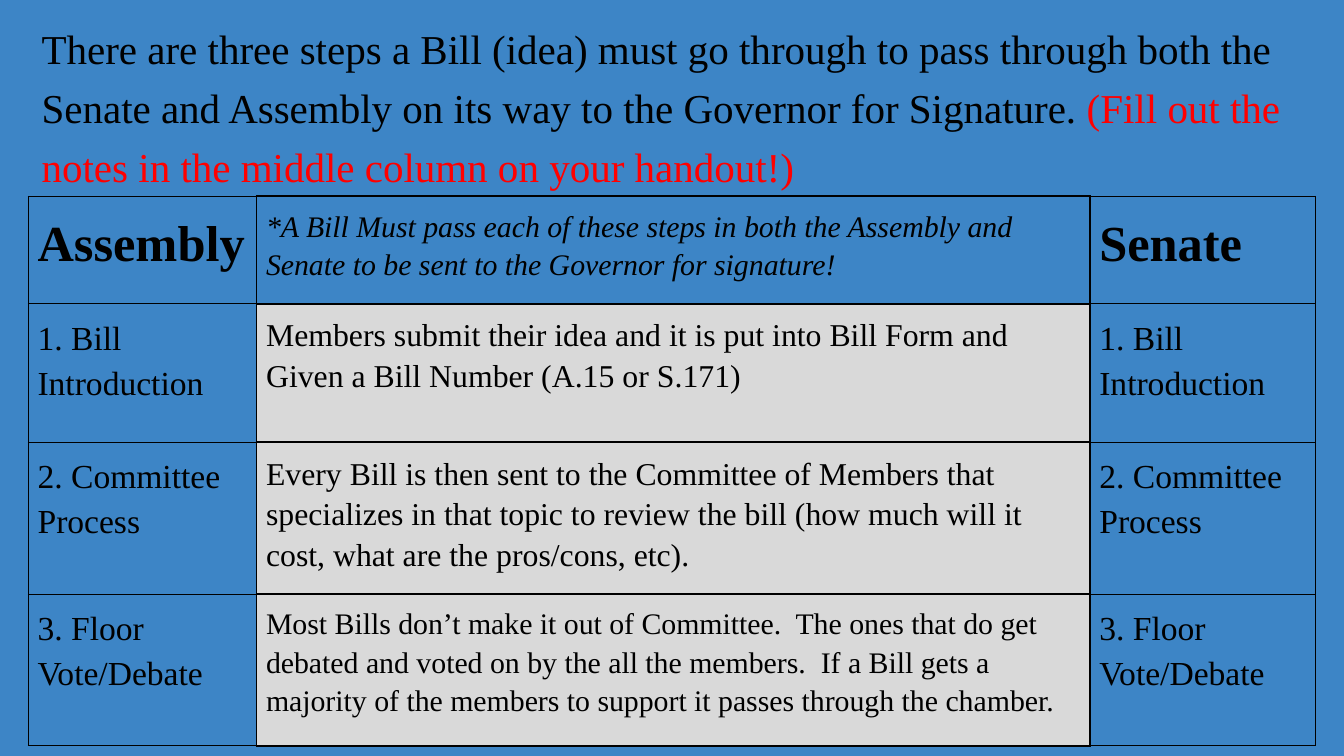
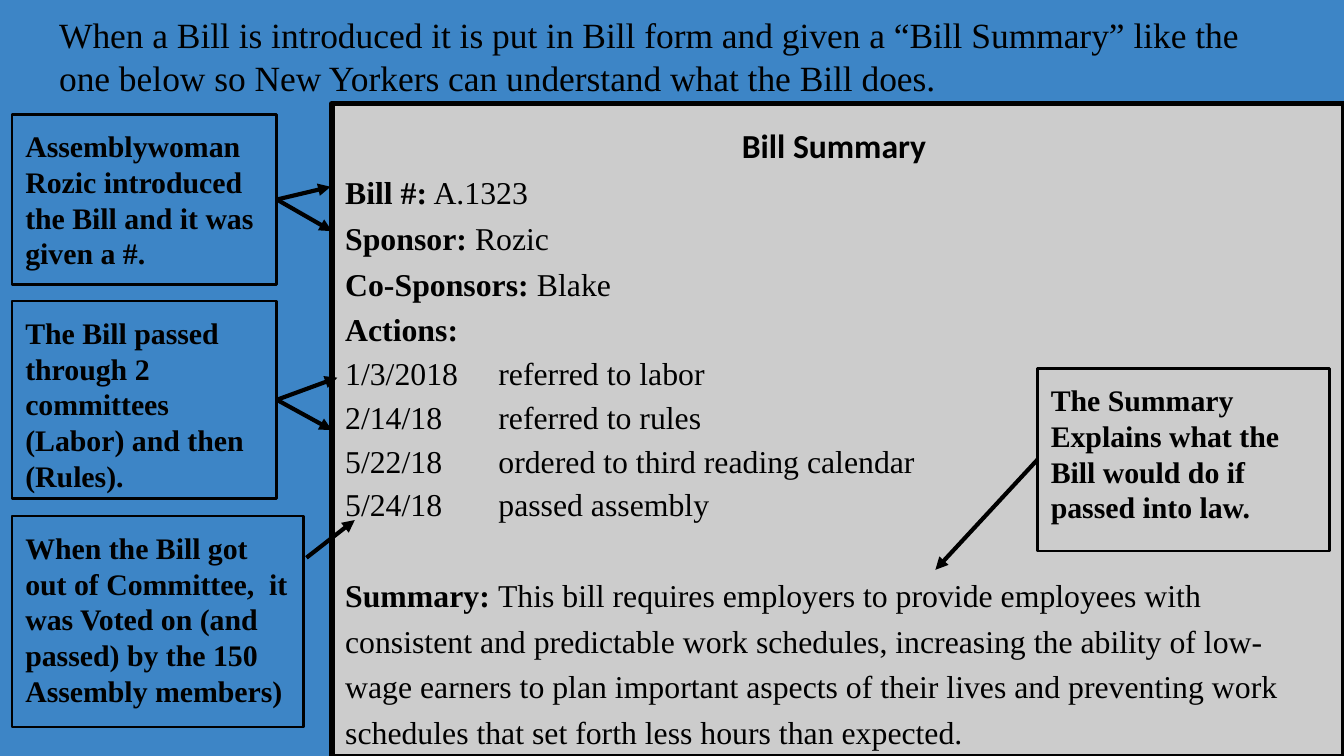
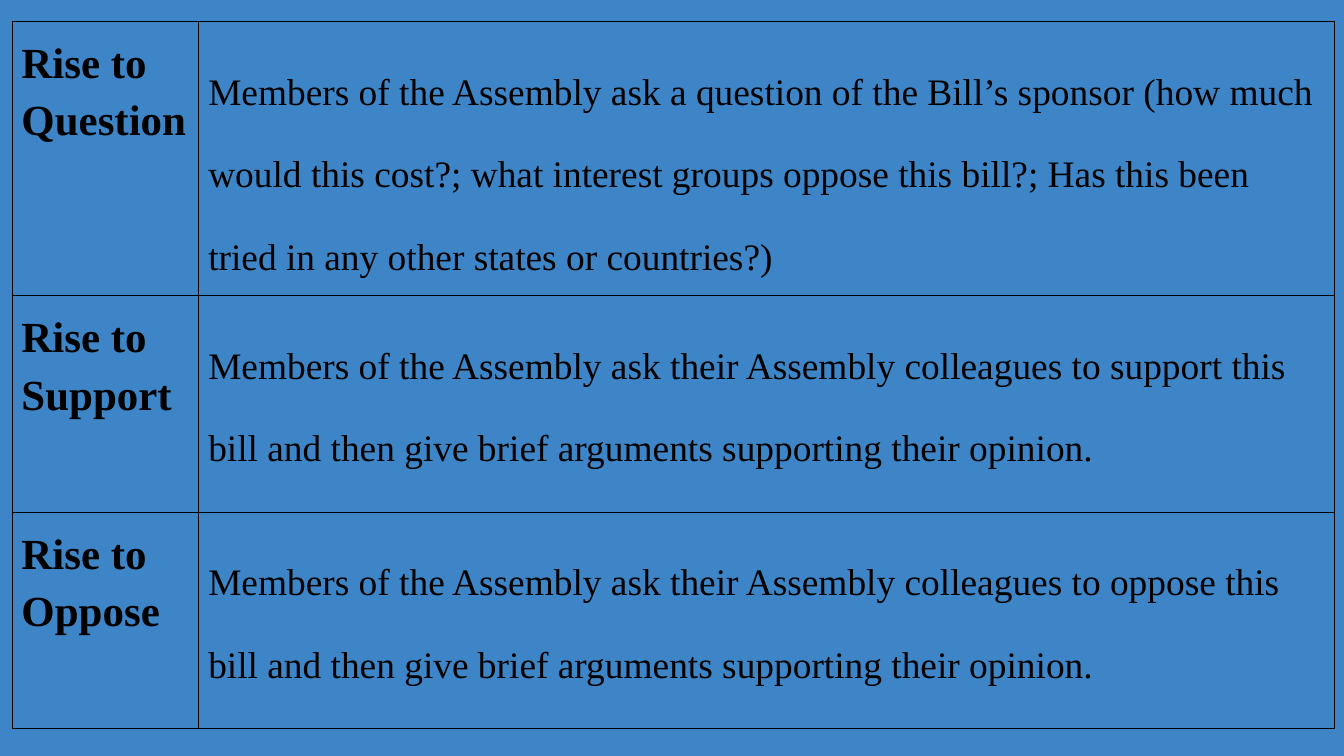
from lxml import etree
from pptx import Presentation
from pptx.dml.color import RGBColor
from pptx.enum.shapes import MSO_CONNECTOR, MSO_SHAPE
from pptx.enum.text import MSO_ANCHOR, MSO_AUTO_SIZE, PP_ALIGN
from pptx.oxml.ns import qn
from pptx.util import Inches, Pt

COLORS = {
    "background": "3D85C6",
    "ink": "000000",
    "alert": "FF0000",
    "panel": "CCCCCC",
    "notes": "D9D9D9",
}
SERIF, SANS = "Times New Roman", "Calibri"
LEFT, CENTER = PP_ALIGN.LEFT, PP_ALIGN.CENTER
TOP, NO_FIT = MSO_ANCHOR.TOP, MSO_AUTO_SIZE.NONE
RECTANGLE, STRAIGHT = MSO_SHAPE.RECTANGLE, MSO_CONNECTOR.STRAIGHT
TITLE_ONLY, BLANK = 5, 6
LEFT_SIDE, RIGHT_SIDE = 1, 3

STEPS = [
    ("1. Bill Introduction", 17,
     "Members submit their idea and it is put into Bill Form and Given a Bill Number "
     "(A.15 or S.171)"),
    ("2. Committee Process", 17,
     "Every Bill is then sent to the Committee of Members that specializes in that topic "
     "to review the bill (how much will it cost, what are the pros/cons, etc)."),
    ("3. Floor Vote/Debate", 16,
     "Most Bills don’t make it out of Committee.  The ones that do get debated and voted "
     "on by the all the members.  If a Bill gets a majority of the members to support it "
     "passes through the chamber."),
]
BILL_FACTS = [("Bill #:", " A.1323"), ("Sponsor: ", "Rozic"),
              ("Co-Sponsors:", " Blake"), ("Actions:", "")]
BILL_ACTIONS = [
    ("1/3/2018", "referred to labor"),
    ("2/14/18", "referred to rules"),
    ("5/22/18", "ordered to third reading calendar"),
    ("5/24/18", "passed assembly"),
]
BILL_SUMMARY = (
    "This bill requires employers to provide employees with consistent and predictable "
    "work schedules, increasing the ability of low-wage earners to plan important aspects "
    "of their lives and preventing work schedules that set forth less hours than expected.")
OPINION = ("Members of the Assembly ask their Assembly colleagues to {} this bill and then "
           "give brief arguments supporting their opinion.")
FLOOR_MOVES = [
    ("Rise to Question",
     "Members of the Assembly ask a question of the Bill’s sponsor (how much would this "
     "cost?; what interest groups oppose this bill?; Has this been tried in any other "
     "states or countries?)"),
    ("Rise to Support", OPINION.format("support")),
    ("Rise to Oppose", OPINION.format("oppose")),
]


def color(name):
    return RGBColor.from_string(COLORS[name])


def format_paragraph(para, size, spacing=1.0, font=SERIF, bold=False, italic=False, align=LEFT):
    para.alignment = align
    para.line_spacing = spacing
    para.font.name = font
    para.font.size = Pt(size)
    para.font.bold = bold
    para.font.italic = italic
    para.font.color.rgb = color("ink")


def add_span(para, text, bold=None):
    span = para.add_run()
    span.text = text
    span.font.bold = bold
    return span


def set_frame(frame):
    frame.word_wrap = True
    frame.auto_size = NO_FIT
    frame.vertical_anchor = TOP
    frame.margin_left = frame.margin_right = Inches(0.1)
    frame.margin_top = frame.margin_bottom = Inches(0.1)


def set_title(slide, place, text, size, spacing=1.0):
    title = slide.shapes.title
    title.left, title.top, title.width, title.height = map(Inches, place)
    set_frame(title.text_frame)
    para = title.text_frame.paragraphs[0]
    format_paragraph(para, size, spacing)
    add_span(para, text)
    return para


def add_box(slide, place, line_width, fill=None):
    box = slide.shapes.add_shape(RECTANGLE, *map(Inches, place))
    box.shadow.inherit = False
    if fill:
        box.fill.solid()
        box.fill.fore_color.rgb = color(fill)
    else:
        box.fill.background()
    box.line.color.rgb = color("ink")
    box.line.width = Pt(line_width)
    set_frame(box.text_frame)
    return box


def add_callout(slide, place, text):
    box = add_box(slide, place, 1.5)
    para = box.text_frame.paragraphs[0]
    format_paragraph(para, 16, bold=True)
    add_span(para, text)
    return box


def add_arrow(slide, start, end, box=None, side=None):
    """Draw an arrow, joined at its start to a side of box if one is given."""
    arrow = slide.shapes.add_connector(STRAIGHT, *map(Inches, start + end))
    if box is not None:
        arrow.begin_connect(box, side)
    arrow.line.color.rgb = color("ink")
    arrow.line.width = Pt(2.25)
    line = arrow._element.spPr.find(qn("a:ln"))
    etree.SubElement(line, qn("a:tailEnd"), type="triangle")
    etree.SubElement(arrow._element.spPr, qn("a:effectLst"))


def set_borders(cell, widths):
    """Set the left, right, top and bottom border widths, in points."""
    properties = cell._tc.get_or_add_tcPr()
    for side, width in zip("LRTB", widths):
        border = etree.SubElement(properties, qn(f"a:ln{side}"), w=str(Pt(width)))
        fill = etree.SubElement(border, qn("a:solidFill"))
        etree.SubElement(fill, qn("a:srgbClr"), val=COLORS["ink"])


def add_grid(slide, left, top, columns, rows, weights):
    """Add an unfilled table; weights holds the border width of each column."""
    frame = slide.shapes.add_table(len(rows), len(columns), Inches(left), Inches(top),
                                   Inches(sum(columns)), Inches(sum(rows)))
    table = frame.table
    table.first_row = table.horz_banding = False
    for column, width in zip(table.columns, columns):
        column.width = Inches(width)
    for row, height in zip(table.rows, rows):
        row.height = Inches(height)
        for index, cell in enumerate(row.cells):
            own = weights[index]
            set_borders(cell, (max(weights[max(index - 1, 0)], own),
                               max(weights[index:index + 2]), own, own))
            cell.fill.background()
            cell.margin_left = cell.margin_right = Inches(0.07)
            cell.margin_top = cell.margin_bottom = Inches(0.07)
    return table


def fill_cell(cell, text, size, spacing, **style):
    para = cell.text_frame.paragraphs[0]
    format_paragraph(para, size, spacing, **style)
    add_span(para, text)


def set_tab(para, position):
    stops = etree.Element(qn("a:tabLst"))
    etree.SubElement(stops, qn("a:tab"), pos=str(Inches(position)), algn="l")
    para._p.get_or_add_pPr().find(qn("a:defRPr")).addprevious(stops)


def add_fact(frame, label, value):
    para = frame.add_paragraph()
    format_paragraph(para, 17, 1.2)
    add_span(para, label, bold=True)
    if value:
        add_span(para, value)
    return para


def fill_bill(frame):
    heading = frame.paragraphs[0]
    format_paragraph(heading, 18, 1.2, font=SANS, bold=True, align=CENTER)
    add_span(heading, "Bill Summary ")
    for label, value in BILL_FACTS:
        add_fact(frame, label, value)
    for date, action in BILL_ACTIONS:
        para = frame.add_paragraph()
        format_paragraph(para, 17, 1.15)
        set_tab(para, 1.14)
        add_span(para, f"{date}\t{action}")
    add_fact(frame, "Summary: ", BILL_SUMMARY).space_before = Pt(24)


def add_slide(deck, layout):
    return deck.slides.add_slide(deck.slide_layouts[layout])


def build_steps_slide(deck):
    slide = add_slide(deck, TITLE_ONLY)
    title = set_title(
        slide, (0.21, 0, 9.59, 1.46),
        "There are three steps a Bill (idea) must go through to pass through both the Senate "
        "and Assembly on its way to the Governor for Signature. ", 22, 1.2)
    reminder = add_span(title, "(Fill out the notes in the middle column on your handout!)")
    reminder.font.color.rgb = color("alert")

    table = add_grid(slide, 0.21, 1.46, (1.7, 6.2, 1.68), (0.8, 1.03, 1.13, 1.13),
                     (0.5, 1, 0.5))
    fill_cell(table.cell(0, 1), "*A Bill Must pass each of these steps in both the Assembly and "
              "Senate to be sent to the Governor for signature!", 16, 1.15, italic=True)
    for column, chamber in ((0, "Assembly"), (2, "Senate")):
        fill_cell(table.cell(0, column), chamber, 27, 1.2, bold=True)
        for row, (step, _, _) in enumerate(STEPS, 1):
            fill_cell(table.cell(row, column), step, 18, 1.2)
    for row, (_, size, note) in enumerate(STEPS, 1):
        cell = table.cell(row, 1)
        cell.fill.solid()
        cell.fill.fore_color.rgb = color("notes")
        fill_cell(cell, note, size, 1.15)


def build_summary_slide(deck):
    slide = add_slide(deck, TITLE_ONLY)
    set_title(slide, (0.34, 0, 9.32, 0.85),
              "When a Bill is introduced it is put in Bill form and given a “Bill Summary” like "
              "the one below so New Yorkers can understand what the Bill does.", 19)
    bill = add_box(slide, (2.47, 0.77, 7.53, 4.86), 3, "panel")
    fill_bill(bill.text_frame)

    sponsor = add_callout(slide, (0.09, 0.85, 1.97, 1.27),
                          "Assemblywoman Rozic introduced the Bill and it was given a #.")
    committees = add_callout(slide, (0.09, 2.24, 1.97, 1.47),
                             "The Bill passed through 2 committees (Labor) and then (Rules).")
    add_callout(slide, (0.09, 3.84, 2.17, 1.57),
                "When the Bill got out of Committee,  it was Voted on (and passed) by the 150 "
                "Assembly members)")
    effect = add_callout(slide, (7.72, 2.74, 2.17, 1.36),
                         "The Summary Explains what the Bill would do if passed into law.")

    for end in ((2.46, 1.39), (2.47, 1.72)):
        add_arrow(slide, (2.06, 1.48), end, sponsor, RIGHT_SIDE)
    for end in ((2.51, 2.81), (2.47, 3.2)):
        add_arrow(slide, (2.06, 2.98), end, committees, RIGHT_SIDE)
    add_arrow(slide, (2.28, 4.15), (2.64, 3.87))
    add_arrow(slide, (7.72, 3.42), (6.96, 4.24), effect, LEFT_SIDE)


def build_floor_slide(deck):
    slide = add_slide(deck, BLANK)
    table = add_grid(slide, 0.09, 0.16, (1.39, 8.45), (2.04, 1.61, 1.61), (0.5, 0.5))
    for row, (move, meaning) in enumerate(FLOOR_MOVES):
        fill_cell(table.cell(row, 0), move, 23, 1.2, bold=True)
        fill_cell(table.cell(row, 1), meaning, 20, 1.99)


def main():
    deck = Presentation()
    deck.slide_width = Inches(10)
    deck.slide_height = Inches(10 * 9 / 16)
    background = deck.slide_master.background.fill
    background.solid()
    background.fore_color.rgb = color("background")
    build_steps_slide(deck)
    build_summary_slide(deck)
    build_floor_slide(deck)
    deck.save("out.pptx")


if __name__ == "__main__":
    main()
